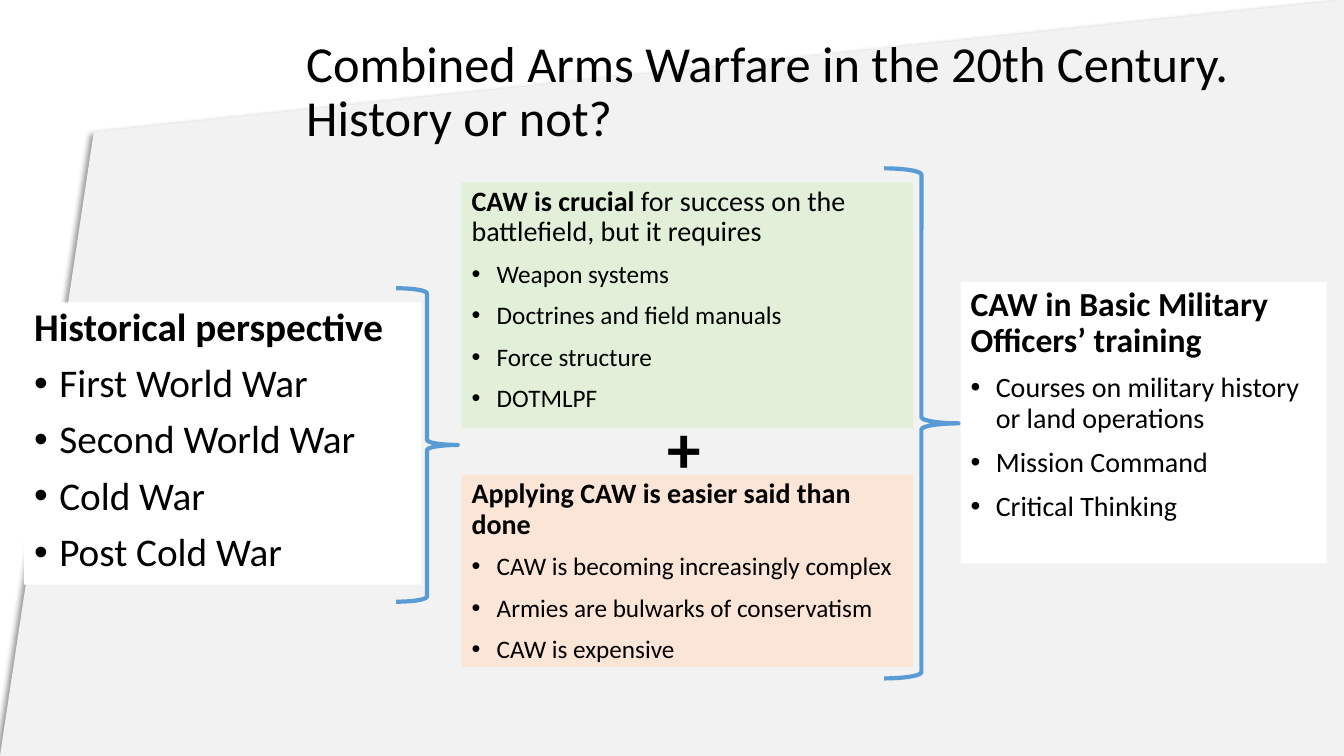
from lxml import etree
from pptx import Presentation
from pptx.dml.color import RGBColor
from pptx.enum.shapes import MSO_SHAPE as SHAPE
from pptx.enum.text import MSO_ANCHOR as ANCHOR, PP_ALIGN as ALIGN
from pptx.oxml.ns import qn
from pptx.util import Inches, Pt

W, H = Inches(13.33), Inches(7.5)
FONT = "Calibri"
BLACK, WHITE, GREY = "000000", "FFFFFF", "F2F2F2"
GREEN, PEACH, BLUE = "E2F0D9", "FBE5D6", "5B9BD5"
MIDDLE_X, MIDDLE_W = 34.35, 33.6


def rgb(color):
    return RGBColor.from_string(color)


def place(x, y, w, h):
    """Turn percentages of the slide's width and height into lengths."""
    return [round(v * side / 100) for v, side in ((x, W), (y, H), (w, W), (h, H))]


def write(p, text, size, bold=False):
    p.text = text
    p.line_spacing = 0.9
    p.alignment = ALIGN.LEFT
    for r in p.runs:
        font = r.font
        font.name, font.size, font.bold = FONT, Pt(size), bold
        font.color.rgb = rgb(BLACK)


def add_bullet(p):
    pPr = p._p.get_or_add_pPr()
    pPr.set("marL", str(Inches(0.25)))
    pPr.set("indent", str(-Inches(0.25)))
    etree.SubElement(pPr, qn("a:buFont"), typeface="Arial")
    etree.SubElement(pPr, qn("a:buChar"), char="•")


def add_backdrop(shapes):
    """Draw the slanted grey sheet with a soft shadow on its left edge."""
    corners = [place(x, y, 0, 0)[:2]
               for x, y in ((6.98, 17.47), (100, 0), (100, 100), (0, 100))]
    builder = shapes.build_freeform(*corners[0])
    builder.add_line_segments(corners[1:], close=True)
    sp = builder.convert_to_shape()
    sp.fill.solid()
    sp.fill.fore_color.rgb = rgb(GREY)
    sp.line.fill.background()
    sp.shadow.inherit = False
    effects = sp._element.spPr.find(qn("a:effectLst"))
    shadow = etree.SubElement(effects, qn("a:outerShdw"), blurRad=str(Pt(4)),
                              dist=str(Pt(3)), dir=str(135 * 60000),
                              algn="tr", rotWithShape="0")
    color = etree.SubElement(shadow, qn("a:srgbClr"), val=BLACK)
    etree.SubElement(color, qn("a:alpha"), val="40000")


def add_label(shapes, box, text, size, bold=False, anchor=ANCHOR.TOP):
    tf = shapes.add_textbox(*place(*box)).text_frame
    tf.word_wrap = True
    tf.vertical_anchor = anchor
    write(tf.paragraphs[0], text, size, bold)


def add_card(shapes, box, fill, heading, heading_size, bullets, bullet_size):
    """Add a filled panel with a bold heading over bullets; return the heading."""
    sp = shapes.add_shape(SHAPE.RECTANGLE, *place(*box))
    sp.shadow.inherit = False
    sp.fill.solid()
    sp.fill.fore_color.rgb = rgb(fill)
    sp.line.fill.background()
    tf = sp.text_frame
    tf.word_wrap = True
    tf.vertical_anchor = ANCHOR.TOP
    title = tf.paragraphs[0]
    write(title, heading, heading_size, bold=True)
    for text in bullets:
        p = tf.add_paragraph()
        p.space_before = Pt(10)
        write(p, text, bullet_size)
        add_bullet(p)
    return title


def add_brace(shapes, box):
    sp = shapes.add_shape(SHAPE.RIGHT_BRACE, *place(*box))
    sp.shadow.inherit = False
    sp.fill.background()
    sp.line.color.rgb = rgb(BLUE)
    sp.line.width = Pt(3)


def main():
    prs = Presentation()
    prs.slide_width, prs.slide_height = W, H
    shapes = prs.slides.add_slide(prs.slide_layouts[6]).shapes

    add_backdrop(shapes)
    add_label(shapes, (22.05, 2.67, 75.75, 19.33),
              "Combined Arms Warfare in the 20th Century. \vHistory or not?",
              36, anchor=ANCHOR.MIDDLE)
    add_card(shapes, (1.8, 40, 29.55, 37.33), WHITE, "Historical perspective", 28,
             ["First World War", "Second World War", "Cold War", "Post Cold War"], 28)
    add_brace(shapes, (29.48, 38.13, 4.58, 41.47))

    crucial = add_card(shapes, (MIDDLE_X, 24.13, MIDDLE_W, 32.53), GREEN,
                       "CAW is crucial ", 20,
                       ["Weapon systems", "Doctrines and field manuals",
                        "Force structure", "DOTMLPF"], 18)
    r = crucial.add_run()
    r.text = "for success on the battlefield, but it requires"
    r.font.name, r.font.size, r.font.bold = FONT, Pt(20), False
    r.font.color.rgb = rgb(BLACK)

    add_card(shapes, (MIDDLE_X, 62.8, MIDDLE_W, 25.47), PEACH,
             "Applying CAW is easier said than done", 20,
             ["CAW is becoming increasingly complex",
              "Armies are bulwarks of conservatism", "CAW is expensive"], 18)
    add_label(shapes, (48.9, 54.27, 4.58, 9.47), "+", 48, bold=True)
    add_brace(shapes, (65.78, 22.27, 5.55, 67.47))
    add_card(shapes, (71.48, 37.33, 27.23, 37.2), WHITE,
             "CAW in Basic Military Officers’ training", 24,
             ["Courses on military history or land operations",
              "Mission Command", "Critical Thinking"], 20)
    prs.save("out.pptx")


if __name__ == "__main__":
    main()
